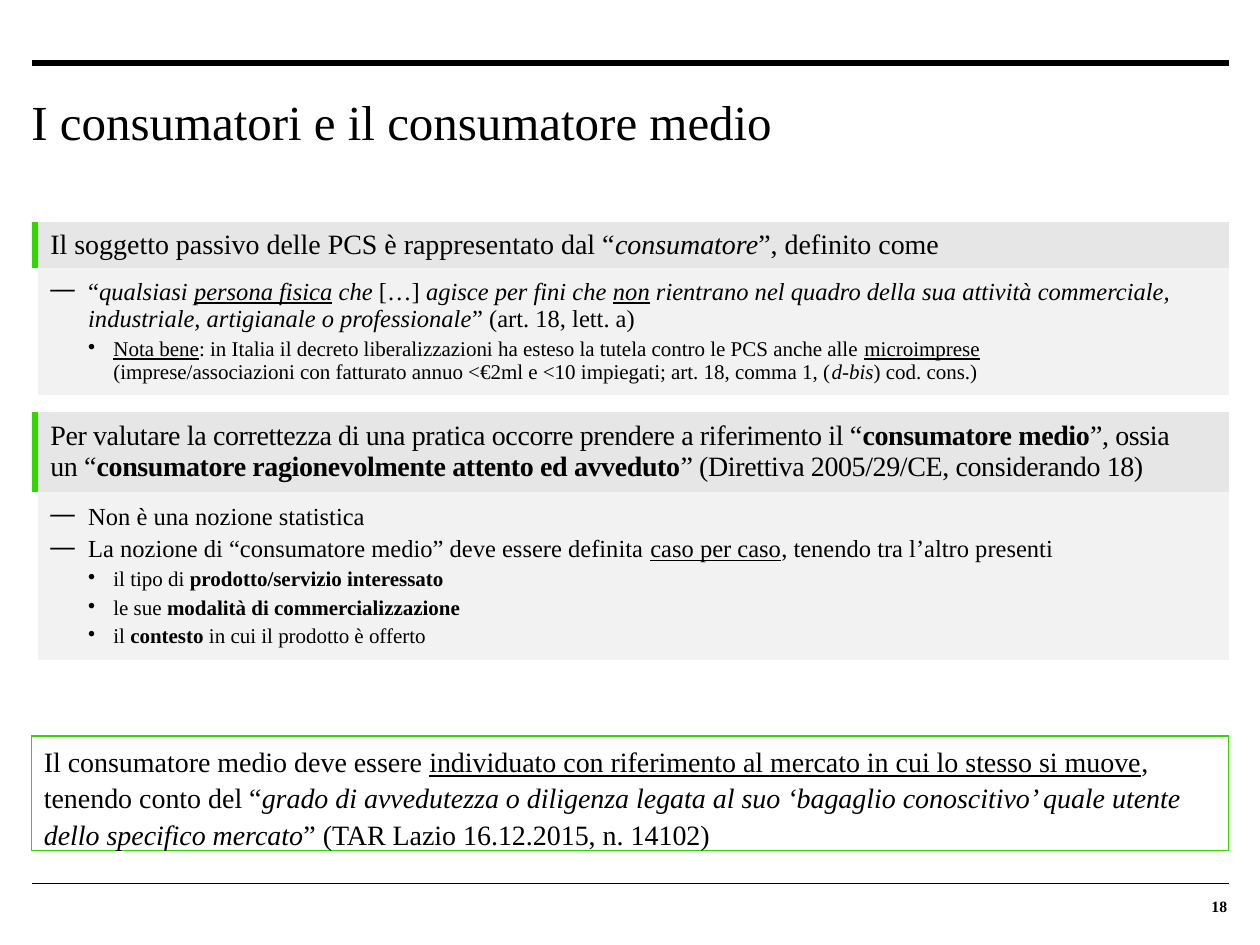
from pptx import Presentation
from pptx import util as u
from pptx.dml.color import RGBColor
from pptx.enum import shapes, text
from pptx.oxml.ns import qn
from lxml import etree

BLACK, GREEN, HEAD_GREY, BODY_GREY = "000000", "32D700", "E6E6E6", "F2F2F2"
NO_STYLE = "{2D5ABB26-0587-4C30-8999-92F81FD0307C}"
LEVELS = [
    {"size": 16},
    {"size": 14, "bullet": "—", "margin": 0.3, "hang": 0.3},
    {"size": 12, "bullet": "•", "margin": 0.5, "hang": 0.2},
]
FLAGS = {"b": "bold", "i": "italic", "u": "underline"}


def color(hex_value):
    return RGBColor.from_string(hex_value)


def apply(target, values):
    for name, value in values.items():
        setattr(target, name, value)


class SlideBuilder:
    font = "Times New Roman"

    def __init__(self, slide):
        self.slide = slide

    def runs(self, paragraph, pieces, size, spacing=None):
        for content, flags in pieces:
            for index, line in enumerate(content.split("\n")):
                if index:
                    paragraph.add_line_break()
                run = paragraph.add_run()
                run.text = line
                apply(run.font, {"name": self.font, "size": u.Pt(size)})
                apply(run.font, {FLAGS[flag]: True for flag in flags})
                run.font.color.rgb = color(BLACK)
                if spacing:
                    run.font._element.set("spc", str(spacing))

    def item(self, paragraph, level, pieces, spacing=None):
        style = LEVELS[level]
        if "bullet" in style:
            paragraph.level = level
            paragraph.space_after = u.Pt(3)
            properties = paragraph._p.get_or_add_pPr()
            properties.set("marL", str(u.Inches(style["margin"])))
            properties.set("indent", str(-u.Inches(style["hang"])))
            etree.SubElement(properties, qn("a:buChar")).set("char", style["bullet"])
        self.runs(paragraph, pieces, style["size"], spacing)

    def text_box(self, left, top, width, height, pieces, size, anchor, align):
        box = self.slide.shapes.add_textbox(*map(u.Inches, (left, top, width, height)))
        frame = box.text_frame
        apply(frame, {"word_wrap": True, "vertical_anchor": anchor, "margin_left": 0,
                      "margin_right": 0, "margin_top": 0, "margin_bottom": 0})
        frame.paragraphs[0].alignment = align
        self.runs(frame.paragraphs[0], pieces, size)

    def rule(self, y, weight):
        line = self.slide.shapes.add_connector(
            shapes.MSO_CONNECTOR.STRAIGHT,
            u.Inches(0.25), u.Inches(y), u.Inches(9.75), u.Inches(y))
        line.line.color.rgb = color(BLACK)
        line.line.width = u.Pt(weight)
        etree.SubElement(line._element.spPr, qn("a:effectLst"))

    def panel(self, top, row_heights, heading, items, spacing=None):
        frame = self.slide.shapes.add_table(
            2, 2, u.Inches(0.25), u.Inches(top), u.Inches(9.5), u.Inches(sum(row_heights)))
        table = frame.table
        apply(table, {"first_row": False, "horz_banding": False})
        table._tbl.tblPr.find(qn("a:tableStyleId")).text = NO_STYLE
        for column, width in zip(table.columns, (0.05, 9.45)):
            column.width = u.Inches(width)
        for row, height in enumerate(row_heights):
            table.rows[row].height = u.Inches(height)
            apply(table.cell(row, 0), {"margin_left": 0, "margin_right": 0,
                                       "margin_top": 0, "margin_bottom": 0})
            table.cell(row, 1).vertical_anchor = text.MSO_ANCHOR.MIDDLE
        fills = {(0, 0): GREEN, (0, 1): HEAD_GREY, (1, 1): BODY_GREY}
        for position, fill in fills.items():
            cell = table.cell(*position)
            cell.fill.solid()
            cell.fill.fore_color.rgb = color(fill)
        table.cell(1, 0).fill.background()
        self.item(table.cell(0, 1).text_frame.paragraphs[0], 0, heading, spacing)
        body = table.cell(1, 1).text_frame
        for index, (level, pieces) in enumerate(items):
            paragraph = body.add_paragraph() if index else body.paragraphs[0]
            self.item(paragraph, level, pieces)

    def callout(self, left, top, width, height, pieces):
        box = self.slide.shapes.add_shape(
            shapes.MSO_SHAPE.RECTANGLE, *map(u.Inches, (left, top, width, height)))
        box.shadow.inherit = False
        box.fill.background()
        box.line.color.rgb = color(GREEN)
        box.line.width = u.Pt(1)
        apply(box.text_frame, {"word_wrap": True, "vertical_anchor": text.MSO_ANCHOR.TOP})
        paragraph = box.text_frame.paragraphs[0]
        apply(paragraph, {"alignment": text.PP_ALIGN.LEFT, "line_spacing": 1.08})
        self.runs(paragraph, pieces, 16)


def main():
    deck = Presentation()
    apply(deck, {"slide_width": u.Inches(10), "slide_height": u.Inches(7.5)})
    builder = SlideBuilder(deck.slides.add_slide(deck.slide_layouts[6]))

    builder.text_box(9.08, 7.04, 0.66, 0.23, [("18", "b")], 9,
                     text.MSO_ANCHOR.BOTTOM, text.PP_ALIGN.RIGHT)
    builder.rule(0.5, 3)
    builder.rule(7.01, 0.5)
    builder.text_box(0.25, 0.73, 9.5, 0.93, [("I consumatori e il consumatore medio", "")],
                     28, text.MSO_ANCHOR.TOP, text.PP_ALIGN.LEFT)

    builder.panel(
        1.76, (0.35, 0.94),
        [("Il soggetto passivo delle PCS è rappresentato dal “", ""),
         ("consumatore", "i"), ("”, definito come", "")],
        [(1, [("“", ""), ("qualsiasi ", "i"), ("persona fisica", "iu"), (" che ", "i"),
              ("[…] ", ""), ("agisce per fini che ", "i"), ("non", "iu"),
              (" rientrano nel quadro della sua attività commerciale, industriale, "
               "artigianale o professionale", "i"),
              ("” (art. 18, lett. a)", "")]),
         (2, [("Nota bene", "u"),
              (": in Italia il decreto liberalizzazioni ha esteso la tutela contro "
               "le PCS anche alle ", ""),
              ("microimprese", "u"),
              (" \n(imprese/associazioni con fatturato annuo <€2ml e <10 impiegati; "
               "art. 18, comma 1, (", ""),
              ("d-bis", "i"), (") cod. cons.)", "")])])

    builder.panel(
        3.27, (0.6, 1.25),
        [("Per valutare la correttezza di una pratica occorre prendere a riferimento il “", ""),
         ("consumatore medio", "b"), ("”, ossia \nun “", ""),
         ("consumatore ragionevolmente attento ed avveduto", "b"),
         ("” (Direttiva 2005/29/CE, considerando 18)", "")],
        [(1, [("Non è una nozione statistica", "")]),
         (1, [("La nozione di “consumatore medio” deve essere definita ", ""),
              ("caso per caso", "u"), (", tenendo tra l’altro presenti", "")]),
         (2, [("il tipo di ", ""), ("prodotto/servizio interessato", "b")]),
         (2, [("le sue ", ""), ("modalità di commercializzazione", "b")]),
         (2, [("il ", ""), ("contesto", "b"), (" in cui il prodotto è offerto", "")])],
        spacing=-20)

    builder.callout(
        0.25, 5.84, 9.5, 0.91,
        [("Il consumatore medio deve essere ", ""),
         ("individuato con riferimento al mercato in cui lo stesso si muove", "u"),
         (", tenendo conto del “", ""),
         ("grado di avvedutezza o diligenza legata al suo ‘bagaglio conoscitivo’ "
          "quale utente dello specifico mercato", "i"),
         ("” (TAR Lazio 16.12.2015, n. 14102)", "")])

    deck.save("out.pptx")


if __name__ == "__main__":
    main()
